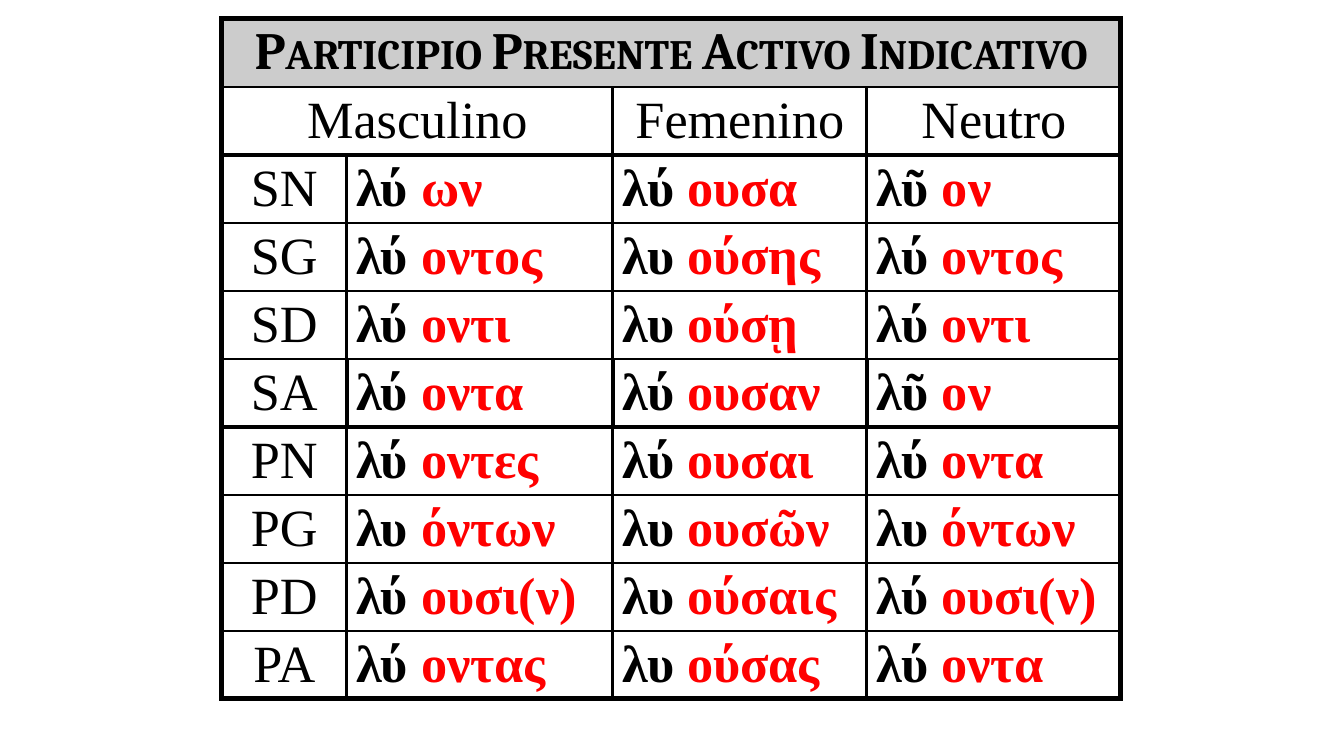
from typing import NamedTuple

from lxml.etree import SubElement
from pptx import Presentation
from pptx.dml.color import RGBColor
from pptx.enum.text import MSO_ANCHOR, PP_ALIGN
from pptx.oxml.ns import qn
from pptx.table import Table, _Cell
from pptx.util import Inches, Pt

BLACK = RGBColor(0x00, 0x00, 0x00)
RED = RGBColor(0xFF, 0x00, 0x00)
GRAY = RGBColor(0xCC, 0xCC, 0xCC)
NO_STYLE = "{2D5ABB26-0587-4C30-8999-92F81FD0307C}"
TEXT_SIZE = Pt(28)
SLIDE_WIDTH = 10


class Form(NamedTuple):
    stem: str
    ending: str


class Case(NamedTuple):
    label: str
    masculine: Form
    feminine: Form
    neuter: Form


CASES = [
    Case("SN", Form("λύ", "ων"), Form("λύ", "ουσα"), Form("λῦ", "ον")),
    Case("SG", Form("λύ", "οντος"), Form("λυ", "ούσης"), Form("λύ", "οντος")),
    Case("SD", Form("λύ", "οντι"), Form("λυ", "ούσῃ"), Form("λύ", "οντι")),
    Case("SA", Form("λύ", "οντα"), Form("λύ", "ουσαν"), Form("λῦ", "ον")),
    Case("PN", Form("λύ", "οντες"), Form("λύ", "ουσαι"), Form("λύ", "οντα")),
    Case("PG", Form("λυ", "όντων"), Form("λυ", "ουσῶν"), Form("λυ", "όντων")),
    Case("PD", Form("λύ", "ουσι(ν)"), Form("λυ", "ούσαις"), Form("λύ", "ουσι(ν)")),
    Case("PA", Form("λύ", "οντας"), Form("λυ", "ούσας"), Form("λύ", "οντα")),
]
COL_WIDTHS = [0.93, 1.98, 1.89, 1.89]
ROW_COUNT = len(CASES) + 2
TABLE_HEIGHT = 5.06

# Line widths in points, from the first edge of the table to the last
ROW_RULES = [3, 1, 2, 1, 1, 1, 2.25, 1, 1, 1, 3]
COL_RULES = [3, 2, 2, 2, 3]
LAST_SINGULAR_ROW = 5
LAST_SINGULAR_COL_RULES = [3, 2.25, 2.25, 2.25, 3]


def add_run(cell: _Cell, text: str, color: RGBColor = BLACK, bold: bool = False,
            font: str = "Times New Roman", small_caps: bool = False) -> None:
    r = cell.text_frame.paragraphs[0].add_run()
    r.text = text
    r.font.size = TEXT_SIZE
    r.font.name = font
    r.font.bold = bold
    r.font.color.rgb = color
    if small_caps:
        r.font._element.set("cap", "small")


def format_cell(cell: _Cell, align: PP_ALIGN, side: float, edge: float) -> None:
    cell.vertical_anchor = MSO_ANCHOR.MIDDLE
    cell.margin_left = cell.margin_right = Inches(side)
    cell.margin_top = cell.margin_bottom = Inches(edge)
    cell.text_frame.paragraphs[0].alignment = align


def add_label(cell: _Cell, text: str) -> None:
    format_cell(cell, PP_ALIGN.CENTER, 0.1, 0.03)
    add_run(cell, text)


def add_form(cell: _Cell, form: Form) -> None:
    format_cell(cell, PP_ALIGN.JUSTIFY, 0.07, 0)
    add_run(cell, f"{form.stem} ", bold=True)
    add_run(cell, form.ending, RED, bold=True)


def set_borders(cell: _Cell, **widths: float) -> None:
    """Draw the given sides; they must precede the cell fill in the XML."""
    tcPr = cell._tc.get_or_add_tcPr()
    for side, width in widths.items():
        ln = SubElement(tcPr, qn(f"a:ln{side}"), w=str(Pt(width)))
        fill = SubElement(ln, qn("a:solidFill"))
        SubElement(fill, qn("a:srgbClr"), val=str(BLACK))


def rule_table(table: Table) -> None:
    for row in range(ROW_COUNT):
        rules = LAST_SINGULAR_COL_RULES if row == LAST_SINGULAR_ROW else COL_RULES
        for col in range(len(COL_WIDTHS)):
            cell = table.cell(row, col)
            if cell.is_spanned:
                continue
            span = cell.span_width if cell.is_merge_origin else 1
            set_borders(cell, L=rules[col], R=rules[col + span],
                        T=ROW_RULES[row], B=ROW_RULES[row + 1])
            cell.fill.background()


def main() -> None:
    prs = Presentation()
    prs.slide_width, prs.slide_height = Inches(SLIDE_WIDTH), Inches(SLIDE_WIDTH * 9 / 16)
    s = prs.slides.add_slide(prs.slide_layouts[6])

    frame = s.shapes.add_table(ROW_COUNT, len(COL_WIDTHS), Inches(1.65), Inches(0.14),
                               Inches(sum(COL_WIDTHS)), Inches(TABLE_HEIGHT))
    table = frame.table
    table.first_row = table.horz_banding = False
    table._tbl.tblPr.find(qn("a:tableStyleId")).text = NO_STYLE
    for column, width in zip(table.columns, COL_WIDTHS):
        column.width = Inches(width)

    title = table.cell(0, 0)
    title.merge(table.cell(0, 3))
    table.cell(1, 0).merge(table.cell(1, 1))
    rule_table(table)

    title.fill.solid()
    title.fill.fore_color.rgb = GRAY
    format_cell(title, PP_ALIGN.CENTER, 0.1, 0.03)
    add_run(title, "Participio Presente Activo Indicativo", bold=True,
            font="Cambria", small_caps=True)

    for col, gender in ((0, "Masculino"), (2, "Femenino"), (3, "Neutro")):
        add_label(table.cell(1, col), gender)
    for row, (label, *forms) in enumerate(CASES, start=2):
        add_label(table.cell(row, 0), label)
        for col, form in enumerate(forms, start=1):
            add_form(table.cell(row, col), form)

    prs.save("out.pptx")


if __name__ == "__main__":
    main()
